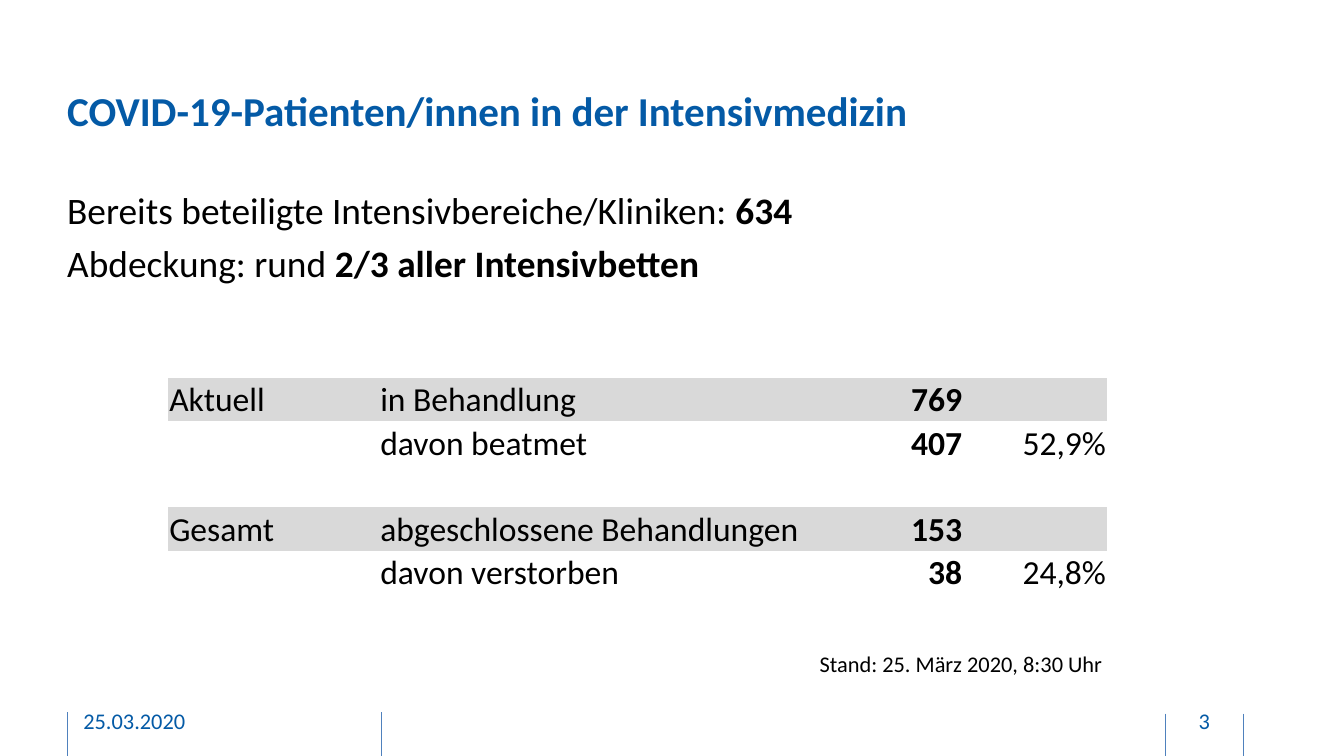
from dataclasses import dataclass

import lxml.etree
import pptx
import pptx.dml.color
import pptx.enum.shapes
import pptx.enum.text
import pptx.oxml.ns
import pptx.util

Inches = pptx.util.Inches
Pt = pptx.util.Pt
ALIGN = pptx.enum.text.PP_ALIGN
ANCHOR = pptx.enum.text.MSO_ANCHOR
qn = pptx.oxml.ns.qn

NO_TABLE_STYLE = "{2D5ABB26-0587-4C30-8999-92F81FD0307C}"


@dataclass(frozen=True)
class Theme:
    font: str = "Calibri"
    blue: str = "045AA6"
    rule: str = "4F81BD"
    black: str = "000000"
    band: str = "D9D9D9"
    title_size: int = 22
    body_size: int = 20
    table_size: int = 18
    small_size: int = 12


def rgb(value):
    return pptx.dml.color.RGBColor.from_string(value)


class SlideBuilder:
    def __init__(self, slide, theme):
        self.slide = slide
        self.theme = theme

    def format(self, paragraph, size, color, bold=None, align=ALIGN.LEFT):
        paragraph.alignment = align
        font = paragraph.font
        font.name = self.theme.font
        font.size = Pt(size)
        font.color.rgb = rgb(color)
        font.bold = bold

    def frame(self, shape, anchor, margins):
        frame = shape.text_frame
        frame.vertical_anchor = anchor
        frame.margin_left = frame.margin_right = Inches(margins[0])
        frame.margin_top = frame.margin_bottom = Inches(margins[1])
        frame.word_wrap = True
        frame.auto_size = pptx.enum.text.MSO_AUTO_SIZE.NONE
        return frame

    def place(self, shape, left, top, width, height):
        shape.left, shape.top = Inches(left), Inches(top)
        shape.width, shape.height = Inches(width), Inches(height)

    def title(self, text, *box):
        heading = self.slide.shapes.title
        self.place(heading, *box)
        frame = self.frame(heading, ANCHOR.MIDDLE, (0, 0))
        frame.text = text
        self.format(frame.paragraphs[0], self.theme.title_size, self.theme.blue, True)

    def body(self, statements, *box):
        """Each statement is a plain lead followed by a bold figure."""
        content = self.slide.placeholders[1]
        self.place(content, *box)
        frame = self.frame(content, ANCHOR.TOP, (0, 0))
        for index, (lead, figure) in enumerate(statements):
            paragraph = frame.add_paragraph() if index else frame.paragraphs[0]
            properties = paragraph._p.get_or_add_pPr()
            properties.set("marL", "0")
            properties.set("indent", "0")
            lxml.etree.SubElement(properties, qn("a:buNone"))
            paragraph.space_before = Pt(4.3 if index else 0)
            self.format(paragraph, self.theme.body_size, self.theme.black)
            paragraph.add_run().text = lead
            emphasis = paragraph.add_run()
            emphasis.text = figure
            emphasis.font.bold = True

    def text(self, text, *box, color, anchor=ANCHOR.MIDDLE, align=ALIGN.LEFT,
             margins=(0, 0.05), wrap=True):
        label = self.slide.shapes.add_textbox(*map(Inches, box))
        frame = self.frame(label, anchor, margins)
        frame.word_wrap = wrap
        frame.text = text
        self.format(frame.paragraphs[0], self.theme.small_size, color, align=align)

    def vertical_rule(self, x, top, length):
        rule = self.slide.shapes.add_connector(
            pptx.enum.shapes.MSO_CONNECTOR.STRAIGHT,
            Inches(x), Inches(top), Inches(x), Inches(top + length))
        rule.line.color.rgb = rgb(self.theme.rule)
        rule.line.width = Pt(0.5)
        lxml.etree.SubElement(rule._element.spPr, qn("a:effectLst"))

    def table(self, rows, left, top, widths, height):
        """Rows with a group name in the first column are shaded."""
        table = self.slide.shapes.add_table(
            len(rows), len(widths), Inches(left), Inches(top),
            Inches(sum(widths)), Inches(height)).table
        table.first_row = table.horz_banding = False
        table._tbl.tblPr.find(qn("a:tableStyleId")).text = NO_TABLE_STYLE
        for column, width in zip(table.columns, widths):
            column.width = Inches(width)
        for row, values in zip(table.rows, rows):
            row.height = Inches(height / len(rows))
            for index, (cell, value) in enumerate(zip(row.cells, values)):
                cell.margin_left = cell.margin_right = cell.margin_top = Inches(0.01)
                cell.margin_bottom = 0
                cell.vertical_anchor = ANCHOR.BOTTOM
                if values[0]:
                    cell.fill.solid()
                    cell.fill.fore_color.rgb = rgb(self.theme.band)
                else:
                    cell.fill.background()
                cell.text = value
                self.format(cell.text_frame.paragraphs[0], self.theme.table_size,
                            self.theme.black, index == 2,
                            ALIGN.RIGHT if index >= 2 else ALIGN.LEFT)


def main():
    presentation = pptx.Presentation()
    # Widescreen, 16:9
    presentation.slide_width = Inches(10)
    presentation.slide_height = Inches(10 * 9 / 16)
    theme = Theme()
    page = SlideBuilder(
        presentation.slides.add_slide(presentation.slide_layouts[1]), theme)

    # Footer: dividers, date and page number
    for x, top in ((0.5, 5.3), (2.84, 5.3), (8.67, 5.31), (9.25, 5.31)):
        page.vertical_rule(x, top, 0.34)
    page.text("25.03.2020", 0.62, 5.21, 2.03, 0.3, color=theme.blue)
    page.text("3", 8.69, 5.21, 0.54, 0.3, color=theme.blue, align=ALIGN.CENTER)

    # Title and key statements
    page.title("COVID-19-Patienten/innen in der Intensivmedizin", 0.5, 0.43, 8.73, 0.78)
    page.body([
        ("Bereits beteiligte Intensivbereiche/Kliniken: ", "634"),
        ("Abdeckung: rund ", "2/3 aller Intensivbetten"),
    ], 0.5, 1.39, 8.73, 3.55)

    # Patient figures
    page.table([
        ("Aktuell", "in Behandlung", "769", ""),
        ("", "davon beatmet", "407", "52,9%"),
        ("", "", "", ""),
        ("Gesamt", "abgeschlossene Behandlungen", "153", ""),
        ("", "davon verstorben", "38", "24,8%"),
    ], 1.25, 2.81, (1.57, 3.52, 0.83, 1.07), 1.61)

    # Date of the figures
    page.text("Stand: 25. März 2020, 8:30 Uhr", 6, 4.79, 2.33, 0.3,
              color=theme.black, anchor=ANCHOR.TOP, margins=(0.1, 0.05), wrap=False)

    presentation.save("out.pptx")


if __name__ == "__main__":
    main()
